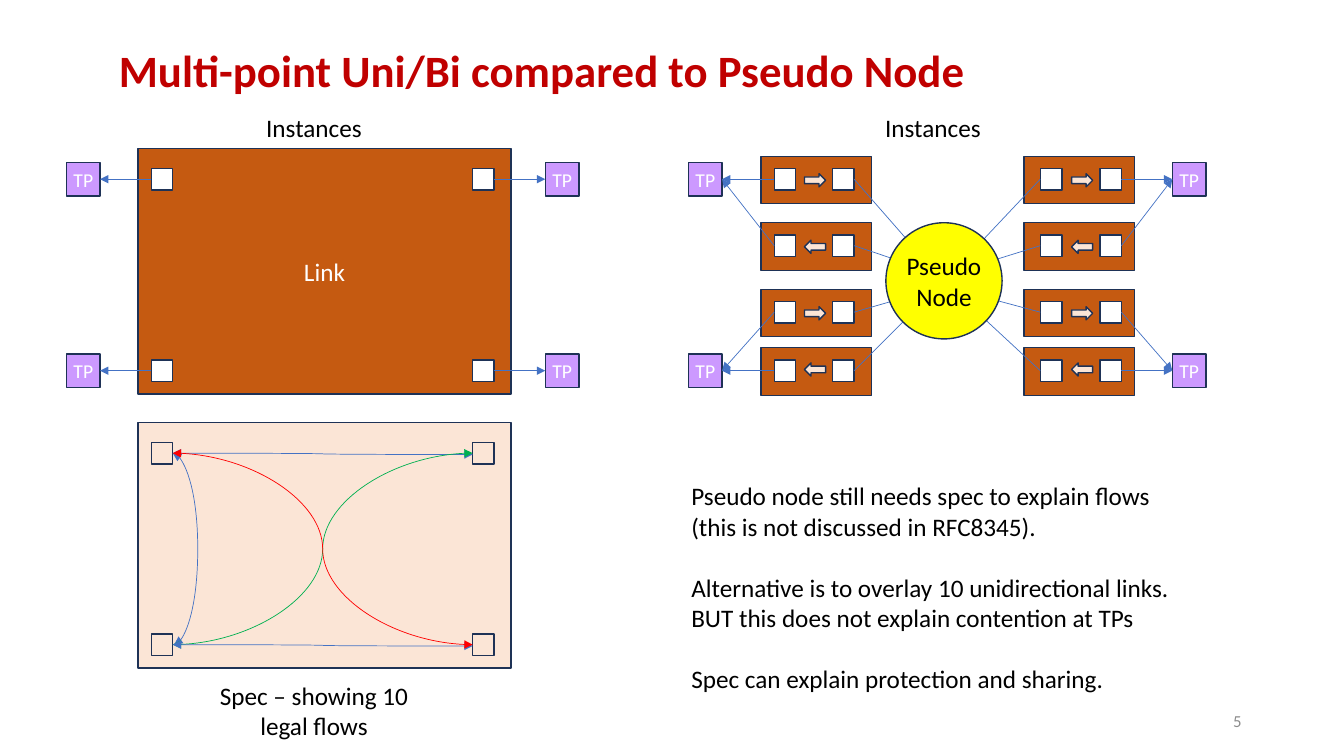
from lxml import etree
from pptx import Presentation
from pptx.dml.color import RGBColor
from pptx.enum.shapes import MSO_CONNECTOR, MSO_SHAPE
from pptx.enum.text import MSO_ANCHOR, PP_ALIGN
from pptx.oxml.ns import qn
from pptx.util import Pt

RECTANGLE, OVAL, ARROW = MSO_SHAPE.RECTANGLE, MSO_SHAPE.OVAL, MSO_SHAPE.RIGHT_ARROW
STRAIGHT, CURVE = MSO_CONNECTOR.STRAIGHT, MSO_CONNECTOR.CURVE
LEFT, CENTER, RIGHT = PP_ALIGN.LEFT, PP_ALIGN.CENTER, PP_ALIGN.RIGHT
TOP, MIDDLE = MSO_ANCHOR.TOP, MSO_ANCHOR.MIDDLE

WHITE = RGBColor(0xFF, 0xFF, 0xFF)
BLACK = RGBColor(0, 0, 0)
GRAY = RGBColor(0x8C, 0x8C, 0x8C)
DARK_RED = RGBColor(0xC0, 0, 0)
ORANGE = RGBColor(0xC5, 0x5A, 0x11)
PEACH = RGBColor(0xFB, 0xE5, 0xD6)
PURPLE = RGBColor(0xCC, 0x99, 0xFF)
YELLOW = RGBColor(0xFF, 0xFF, 0)
NAVY = RGBColor(0x1E, 0x32, 0x56)
BLUE = RGBColor(0x44, 0x72, 0xC4)
GREEN = RGBColor(0, 0xB0, 0x50)
RED = RGBColor(0xFF, 0, 0)

FONT = "Calibri"
SQUARE = 15.4
TP_SIZE = 24
PORT_GAP = 136.8
SIDE_LEFT, SIDE_RIGHT = 1, 3


def format_text(frame, text, size, color, align, bold=False):
    frame.text = text
    for para in frame.paragraphs:
        para.alignment = align
        for span in para.runs:
            span.font.name = FONT
            span.font.size = Pt(size)
            span.font.bold = bold
            span.font.color.rgb = color


def add_text(page, box, text, size=18, color=BLACK, align=LEFT, anchor=TOP, bold=False):
    frame = page.shapes.add_textbox(*map(Pt, box)).text_frame
    frame.word_wrap = True
    frame.vertical_anchor = anchor
    format_text(frame, text, size, color, align, bold)
    return frame


def add_block(page, kind, box, fill, text="", size=18, color=WHITE):
    block = page.shapes.add_shape(kind, *map(Pt, box))
    block.shadow.inherit = False
    block.fill.solid()
    block.fill.fore_color.rgb = fill
    block.line.color.rgb = NAVY
    block.line.width = Pt(1)
    if text:
        frame = block.text_frame
        frame.word_wrap = False
        frame.vertical_anchor = MIDDLE
        frame.margin_left = frame.margin_right = 0
        format_text(frame, text, size, color, CENTER)
    return block


def add_square(page, left, top, fill=WHITE):
    return add_block(page, RECTANGLE, (left, top, SQUARE, SQUARE), fill)


def add_tp(page, left, top):
    return add_block(page, RECTANGLE, (left, top, TP_SIZE, TP_SIZE), PURPLE, "TP", 14)


def add_line(page, kind, start, end, color=BLUE, ends=("tailEnd",)):
    line = page.shapes.add_connector(kind, *map(Pt, start + end))
    line.line.color.rgb = color
    line.line.width = Pt(0.5)
    outline = line.line._get_or_add_ln()
    for name in ends:
        etree.SubElement(outline, qn("a:" + name), type="triangle")
    etree.SubElement(line._element.spPr, qn("a:effectLst"))
    return line


def join_port(page, square, tp, side):
    line = add_line(page, STRAIGHT, (0, 0), (0, 0))
    line.begin_connect(square, side)
    line.end_connect(tp, SIDE_LEFT + SIDE_RIGHT - side)


def place_link_frame(page, box, fill, square_fill, label=""):
    left, top = box[:2]
    add_block(page, RECTANGLE, box, fill, label)
    return [[add_square(page, left + across, top + 14.4 + down, square_fill)
             for across in (9.4, 239)] for down in (0, PORT_GAP)]


def place_link(page, box):
    left, top = box[:2]
    squares = place_link_frame(page, box, ORANGE, WHITE, "Link")
    for row, pair in enumerate(squares):
        for square, across, side in zip(pair, (-51.1, 290.9), (SIDE_LEFT, SIDE_RIGHT)):
            tp = add_tp(page, left + across, top + 10.1 + row * PORT_GAP)
            join_port(page, square, tp, side)


def place_spec(page, box):
    left, top = box[:2]
    place_link_frame(page, box, PEACH, PEACH)
    near, far = left + 9.4 + SQUARE, left + 239
    high = top + 14.4 + SQUARE / 2
    low = high + PORT_GAP
    flows = (
        ((near, high), (near + 1, low), BLUE),
        ((near, high), (far, high + 1), BLUE),
        ((near, low), (far, high), GREEN),
        ((far, low + 1), (near, low), BLUE),
        ((near, high), (far, low), RED),
    )
    curves = [add_line(page, CURVE, start, end, color, ("headEnd", "tailEnd"))
              for start, end, color in flows]
    geometry = curves[0]._element.spPr.find(qn("a:prstGeom"))
    guides = geometry.find(qn("a:avLst"))
    if guides is None:
        guides = etree.SubElement(geometry, qn("a:avLst"))
    etree.SubElement(guides, qn("a:gd"), name="adj1", fmla="val 1800000")


def place_pseudo_node(page, left, top):
    center_x, center_y, diameter = left + 182.5, top + 89, 83
    row_tops = (0, 47.5, 95, PORT_GAP)
    columns = (
        (0, 51.8, (9.4, 51.1), 31, SIDE_LEFT, -5.4),
        (345.6, 239.8, (11.5, 54), 33.8, SIDE_RIGHT, 5.4),
    )
    for tp_x, block_x, square_xs, arrow_x, side, hub_shift in columns:
        tps = [add_tp(page, left + tp_x, top + 4.4 + down) for down in (0, PORT_GAP)]
        for row, row_top in enumerate(row_tops):
            x, y = left + block_x, top + row_top
            add_block(page, RECTANGLE, (x, y, 78.8, 34), ORANGE)
            pair = [add_square(page, x + across, y + 8.7) for across in square_xs]
            arrow_y = 10.8 if row == 3 else 12.5
            arrow = add_block(page, ARROW, (x + arrow_x, y + arrow_y, 15.1, 9.4), PEACH)
            arrow.rotation = 180 * (row % 2)
            outer, inner = pair if side == SIDE_LEFT else pair[::-1]
            join_port(page, outer, tps[row // 2], side)
            hub_y = center_y + (-5.4 if row < 2 else 5.4)
            spoke = add_line(page, STRAIGHT, (0, 0), (center_x + hub_shift, hub_y))
            spoke.begin_connect(inner, SIDE_LEFT + SIDE_RIGHT - side)
    add_block(page, OVAL, (center_x - diameter / 2, center_y - diameter / 2, diameter, diameter),
              YELLOW, "Pseudo\nNode", 18, BLACK)


def place_notes(page, box):
    frame = add_text(page, box, "\n".join((
        "Pseudo node still needs spec to explain flows (this is not discussed in RFC8345).",
        "Alternative is to overlay 10 unidirectional links.",
        "BUT this does not explain contention at TPs",
        "Spec can explain protection and sharing.",
    )))
    for index in (1, 3):
        frame.paragraphs[index].space_before = Pt(22)


def main():
    deck = Presentation()
    deck.slide_width, deck.slide_height = Pt(960), Pt(540)
    page = deck.slides.add_slide(deck.slide_layouts[6])
    title = add_text(page, (77.8, 25.2, 828, 54), "Multi-point Uni/Bi compared to Pseudo Node",
                     32, DARK_RED, anchor=MIDDLE, bold=True)
    title.paragraphs[0].line_spacing = 0.9
    place_link(page, (98.6, 105.9, 266.4, 175.7))
    place_spec(page, (98.6, 301.6, 266.4, 175.7))
    place_pseudo_node(page, 491.8, 111.6)
    for left in (147.6, 589.7):
        add_text(page, (left, 77, 153.4, 29), "Instances", align=CENTER)
    add_text(page, (147.6, 482.4, 153.4, 51), "Spec – showing 10 legal flows", align=CENTER)
    place_notes(page, (486.7, 339.8, 359.3, 160))
    add_text(page, (678, 500.4, 216, 28.8), "5", 12, GRAY, RIGHT, MIDDLE)
    deck.save("out.pptx")


if __name__ == "__main__":
    main()
